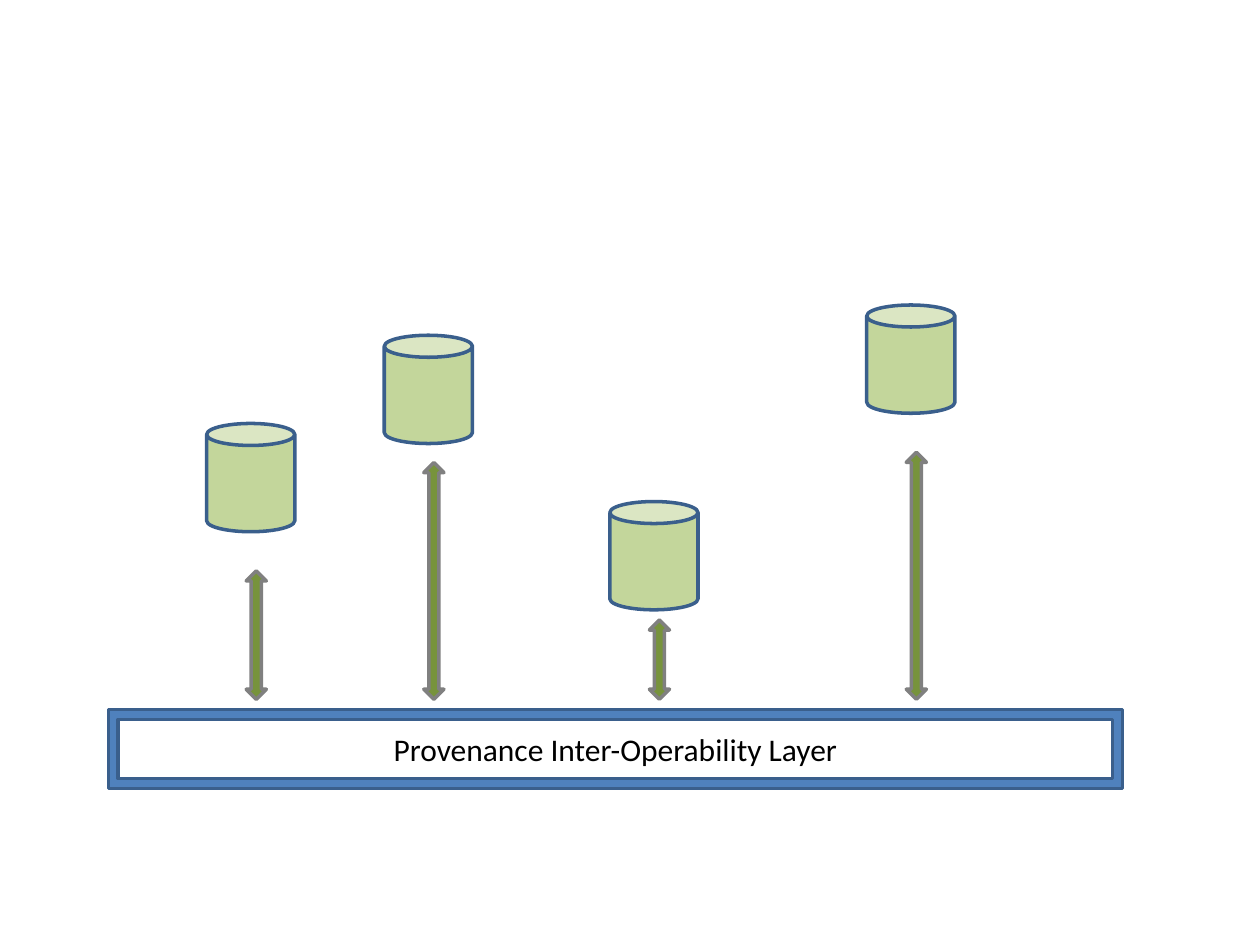
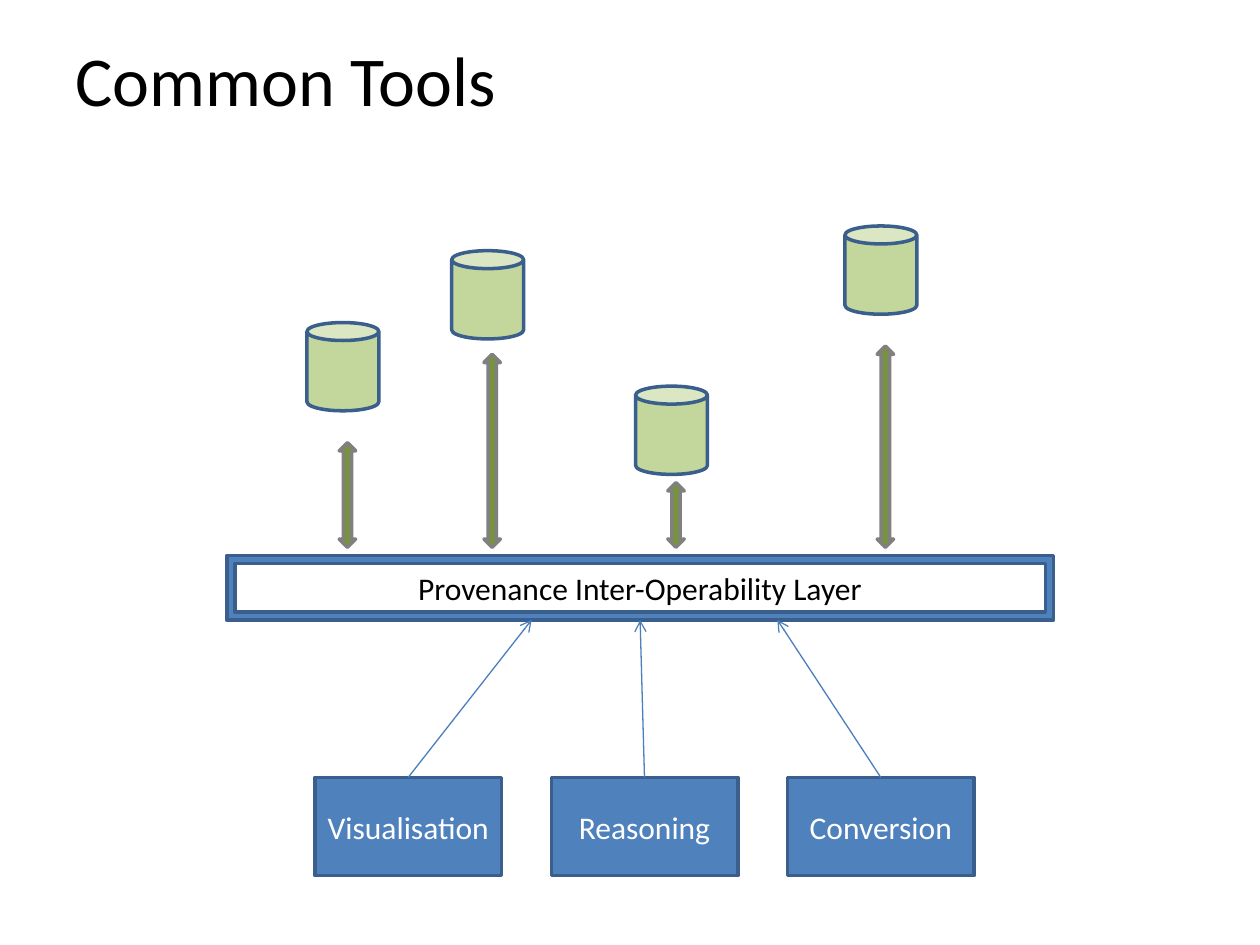
from dataclasses import dataclass
from pptx import Presentation
from pptx import util as u
from pptx.dml import color
from pptx.enum import shapes, text
from pptx.oxml import ns, xmlchemy

Pt = u.Pt
KIND = shapes.MSO_SHAPE


@dataclass(frozen=True)
class Theme:
    font: str = "Calibri"
    title: int = 40
    body: int = 18
    black: str = "000000"
    white: str = "FFFFFF"
    blue: str = "4F81BD"
    edge: str = "3A5F8C"
    link: str = "4B7EBC"
    store: str = "C3D69B"
    arrow: str = "77933C"
    gray: str = "808080"


T = Theme()


def rgb(code):
    return color.RGBColor.from_string(code)


def draw(slide, kind, box, fill, edge=T.edge, label="", ink=T.white):
    """Add a filled, outlined shape with an optional centred label."""
    shape = slide.shapes.add_shape(kind, *map(Pt, box))
    shape.shadow.inherit = False
    shape.fill.solid()
    shape.fill.fore_color.rgb = rgb(fill)
    shape.line.color.rgb = rgb(edge)
    shape.line.width = Pt(2)
    if label:
        frame = shape.text_frame
        frame.word_wrap = False
        frame.vertical_anchor = text.MSO_ANCHOR.MIDDLE
        para = frame.paragraphs[0]
        para.text = label
        para.alignment = text.PP_ALIGN.CENTER
        para.font.name, para.font.size = T.font, Pt(T.body)
        para.font.color.rgb = rgb(ink)
    return shape


prs = Presentation()
prs.slide_width, prs.slide_height = Pt(720), Pt(540)

# Store left and top, then arrow top, measured from the layer's top left corner
stores = [(56.2, -163.4, -79.2), (157.7, -213.8, -141.1),
          (286.6, -118.8, -51.1), (433.4, -231.1, -146.9)]

# Layer left, top and scale on each slide
for left, top, scale in [(61.9, 405.4, 1), (129.6, 317.5, 0.815)]:
    slide = prs.slides.add_slide(prs.slide_layouts[6])

    def place(x, y, w, h):
        return left + x * scale, top + y * scale, w * scale, h * scale

    for x, y, tip in stores:
        draw(slide, KIND.CAN, place(x, y, 50.4, 61.9), T.store)
        draw(slide, KIND.UP_DOWN_ARROW, place(x + 22.6, tip, 11.5, -5.8 - tip),
             T.arrow, T.gray)
    layer = draw(slide, KIND.FRAME, place(0, 0, 579.6, 45.2), T.blue,
                 label="Provenance Inter-Operability Layer", ink=T.black)

# Title and tools on the second slide
title = slide.shapes.add_textbox(Pt(36), Pt(0), Pt(534), Pt(90)).text_frame
title.word_wrap = True
title.vertical_anchor = text.MSO_ANCHOR.MIDDLE
head = title.paragraphs[0]
head.text = "Common Tools"
head.font.name, head.font.size = T.font, Pt(T.title)
head.font.color.rgb = rgb(T.black)

tools = [("Visualisation", 303.8), ("Reasoning", None), ("Conversion", 444.2)]
for i, (name, end) in enumerate(tools):
    x, y, w = 180 + 135 * i, 444.2, 106.6
    tool = draw(slide, KIND.RECTANGLE, (x, y, w, 56.2), T.blue, label=name)
    line = slide.shapes.add_connector(
        shapes.MSO_CONNECTOR.STRAIGHT, Pt(x + w / 2), Pt(y),
        Pt(end or 365.8), Pt(354.2))
    line.begin_connect(tool, 0)
    if end is None:
        line.end_connect(layer, 2)
    line.line.color.rgb = rgb(T.link)
    line.line.width = Pt(0.75)
    tail = xmlchemy.OxmlElement("a:tailEnd")
    tail.set("type", "arrow")
    line.line._get_or_add_ln().append(tail)
    props = line._element.spPr
    props.append(props.makeelement(ns.qn("a:effectLst"), {}))

prs.save("out.pptx")
